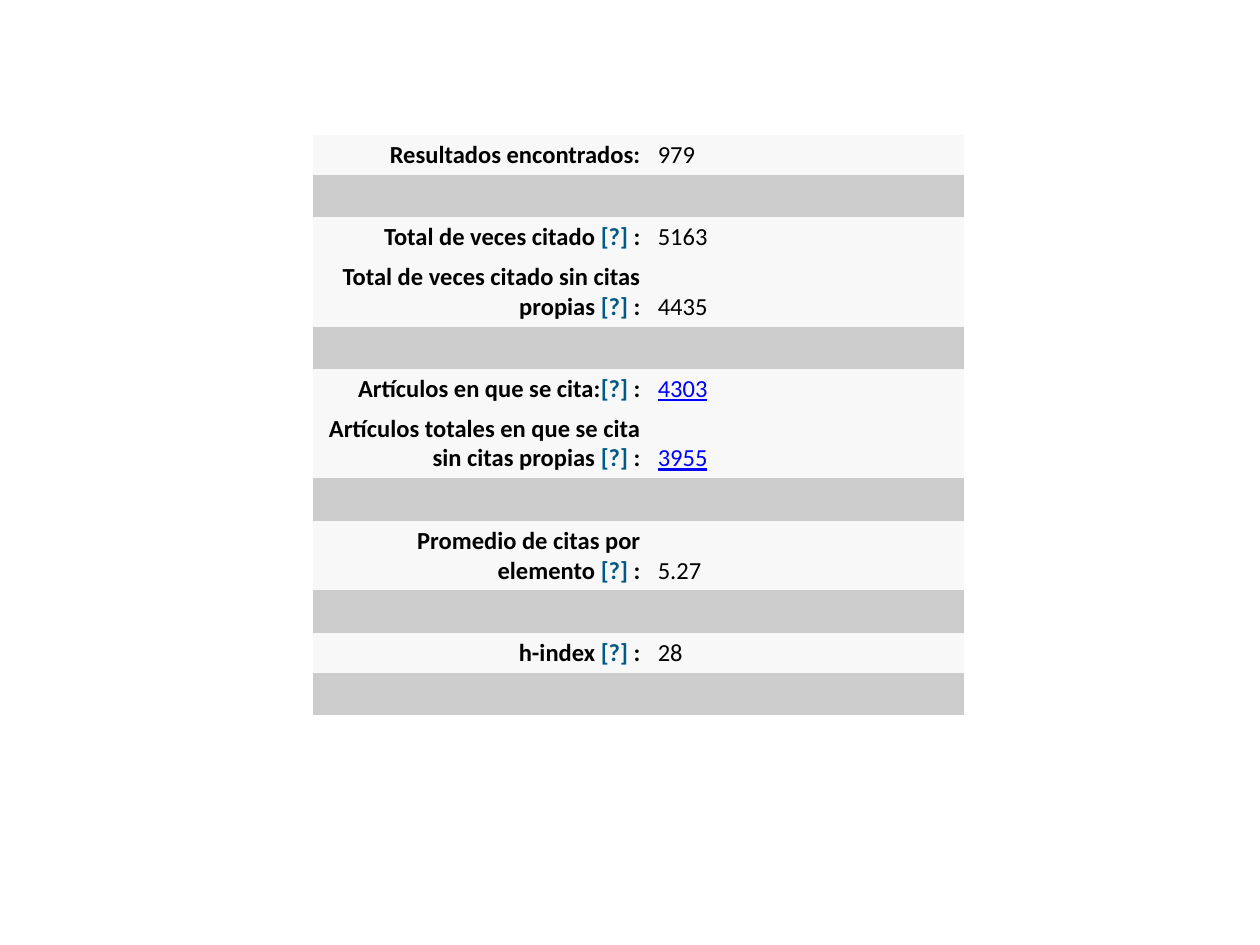
import dataclasses

import lxml.etree
import pptx
import pptx.dml.color
import pptx.enum.text
import pptx.oxml.ns
import pptx.util

Cm = pptx.util.Cm
Align = pptx.enum.text.PP_ALIGN


@dataclasses.dataclass(frozen=True)
class Theme:
    font: str = "Calibri"
    size: int = 14
    ink: str = "000000"
    help_mark: str = "005A84"
    link: str = "0000FF"
    row_fill: str = "F8F8F8"
    divider_fill: str = "CCCCCC"
    plain_style: str = "{2D5ABB26-0587-4C30-8999-92F81FD0307C}"


class SlideBuilder:
    def __init__(self, deck, theme):
        self.theme = theme
        self.page = deck.slides.add_slide(deck.slide_layouts[6])

    def table(self, left, top, widths, heights):
        frame = self.page.shapes.add_table(
            len(heights), len(widths), Cm(left), Cm(top), Cm(sum(widths)), Cm(sum(heights)))
        table = frame.table
        table.first_row = table.horz_banding = False
        style = frame._element.find(".//" + pptx.oxml.ns.qn("a:tableStyleId"))
        style.text = self.theme.plain_style
        for column, width in zip(table.columns, widths):
            column.width = Cm(width)
        for row, height in zip(table.rows, heights):
            row.height = Cm(height)
        return table

    def fill(self, cell, color):
        cell.fill.solid()
        cell.fill.fore_color.rgb = pptx.dml.color.RGBColor.from_string(color)

    def divider(self, row):
        first, last = row.cells
        first.merge(last)
        for cell in (first, last):
            self.fill(cell, self.theme.divider_fill)
            # Keeps the empty row as low as a line of text
            para = cell.text_frame.paragraphs[0]._p
            lxml.etree.SubElement(para, pptx.oxml.ns.qn("a:endParaRPr"),
                                  sz=str(self.theme.size * 100))

    def text_cell(self, cell, spans, align, inset, bold=False, underline=None):
        self.fill(cell, self.theme.row_fill)
        cell.vertical_anchor = pptx.enum.text.MSO_ANCHOR.BOTTOM
        cell.margin_left, cell.margin_right = Cm(inset), Cm(0.2)
        cell.margin_top = cell.margin_bottom = Cm(0.1)
        para = cell.text_frame.paragraphs[0]
        para.alignment = align
        for text, color in spans:
            span = para.add_run()
            span.text = text
            span.font.name = self.theme.font
            span.font.size = pptx.util.Pt(self.theme.size)
            span.font.bold = bold
            span.font.underline = underline
            span.font.color.rgb = pptx.dml.color.RGBColor.from_string(color)

    def result(self, row, label, value, has_help, is_link):
        theme = self.theme
        spans = [(label, theme.ink)]
        if has_help:
            spans += [("[?]", theme.help_mark), (" :", theme.ink)]
        self.text_cell(row.cells[0], spans, Align.RIGHT, 0.2, bold=True)
        color = theme.link if is_link else theme.ink
        self.text_cell(row.cells[1], [(value, color)], Align.LEFT, 0.15,
                       underline=is_link or None)


# Label, value, help mark, link, lines of text; None is a grey divider
RESULTS = [
    ("Resultados encontrados:", "979", False, False, 1),
    None,
    ("Total de veces citado ", "5163", True, False, 1),
    ("Total de veces citado sin citas propias ", "4435", True, False, 2),
    None,
    ("Artículos en que se cita:", "4303", True, True, 1),
    ("Artículos totales en que se cita sin citas propias ", "3955", True, True, 2),
    None,
    ("Promedio de citas por elemento ", "5.27", True, False, 2),
    None,
    ("h-index ", "28", True, False, 1),
    None,
]
ROW_HEIGHT = {1: 0.79, 2: 1.39}


def main():
    deck = pptx.Presentation()
    deck.slide_width, deck.slide_height = Cm(25.4), Cm(19.05)
    builder = SlideBuilder(deck, Theme())

    # Citation report
    heights = [ROW_HEIGHT[result[-1] if result else 1] for result in RESULTS]
    table = builder.table(6.3, 2.72, [6.81, 6.32], heights)
    for row, result in zip(table.rows, RESULTS):
        if result:
            builder.result(row, *result[:-1])
        else:
            builder.divider(row)

    deck.save("out.pptx")


if __name__ == "__main__":
    main()
